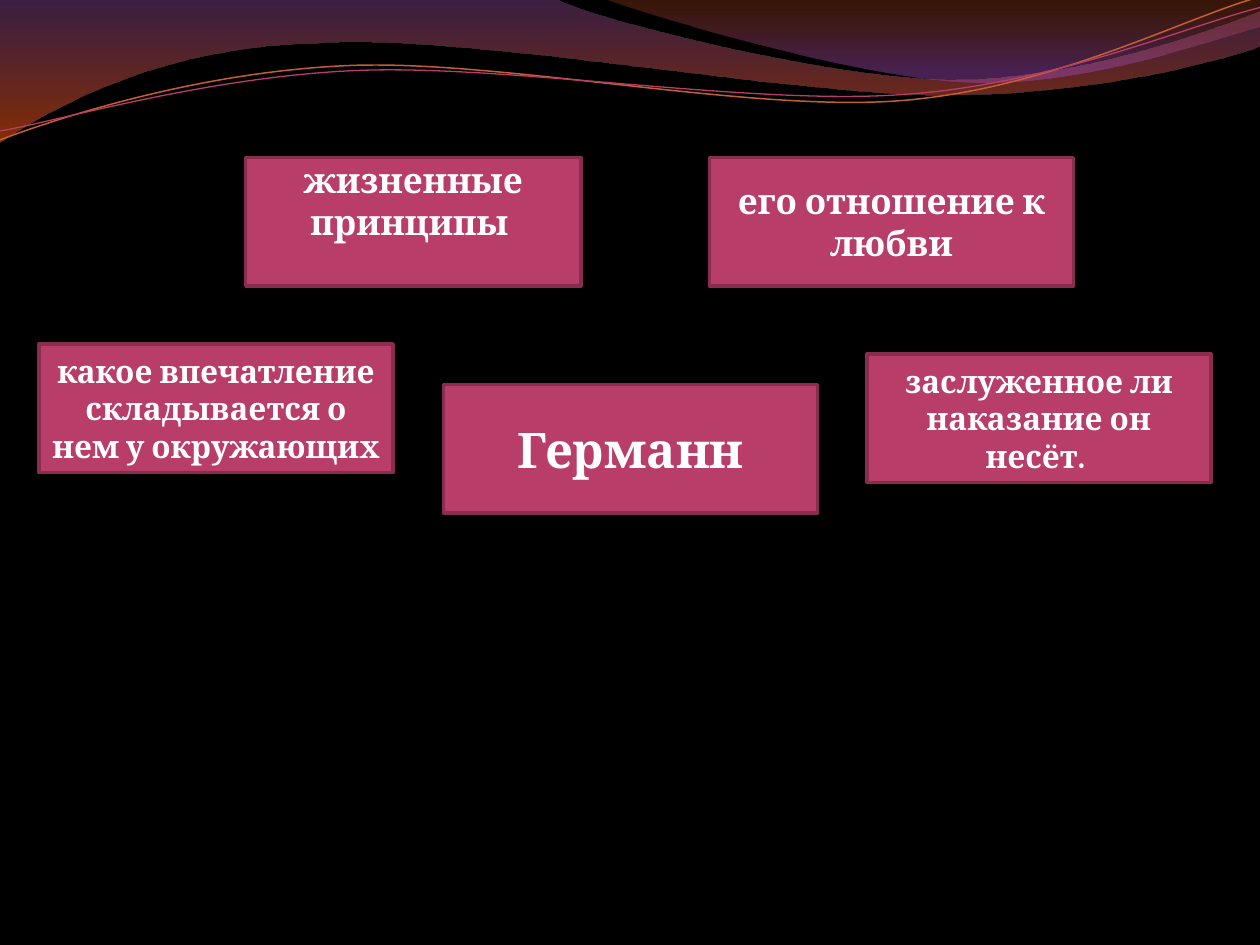
"""Builds a dark slide with a waved header and five topic boxes about Hermann."""
from math import cos, radians, sin

from lxml.etree import SubElement
from pptx import Presentation
from pptx.dml.color import RGBColor
from pptx.enum.shapes import MSO_SHAPE
from pptx.enum.text import MSO_ANCHOR, PP_ALIGN
from pptx.oxml.ns import qn
from pptx.util import Inches, Pt

WIDTH, HEIGHT = 10, 7.5
FONT, BLACK, WHITE, PINK, WINE = "Cambria", "000000", "FFFFFF", "B83D68", "882D4D"
BOX_HEIGHT = 1.02
TILT = 2.7

BANDS = [
    ([(0, 0), (4.4, -0.01), (4.76, 0.17, 6.64, 0.63, 7.58, 0.63),
      (8.53, 0.63, 9.58, 0.26, 10, 0.09), (10.01, 0.36),
      (9.83, 0.44, 8.7, 0.76, 7.46, 0.75), (6.22, 0.75, 3.82, 0.28, 2.57, 0.34),
      (1.29, 0.36, 0.46, 0.83, -0.01, 1.13)],
     [(0, "834591", 45), (1, "F35307", 55)]),
    ([(4.79, -0.01), (5.09, 0.11, 6.82, 0.62, 7.69, 0.65),
      (8.56, 0.69, 9.61, 0.32, 10, 0.21), (10, 0)],
     [(0, "B74915", 30), (0.8, "A14BB4", 45)]),
]
WAVES = [
    ([(0, 1.11), (0.48, 0.93, 1.58, 0.57, 2.77, 0.52),
      (3.95, 0.47, 5.93, 0.89, 7.13, 0.8), (8.33, 0.71, 9.38, 0.15, 9.98, -0.02)],
     (4.99, 0.58), "C45F30", 0.85),
    ([(0, 1.04), (0.47, 0.96, 1.64, 0.61, 2.83, 0.56),
      (4.03, 0.51, 5.97, 0.84, 7.17, 0.75), (8.36, 0.67, 9.41, 0.21, 10, 0.06)],
     (5, 0.59), PINK, 0.75),
]
BOXES = [
    ("Германн", 28, 3.52, 3.05, 2.97, MSO_ANCHOR.MIDDLE),
    ("жизненные принципы ", 20, 1.95, 1.25, 2.66, MSO_ANCHOR.TOP),
    ("его отношение к любви", 20, 5.63, 1.25, 2.89, MSO_ANCHOR.MIDDLE),
    ("заслуженное ли наказание он несёт. ", 18, 6.88, 2.81, 2.73, MSO_ANCHOR.MIDDLE),
    ("какое впечатление складывается о нем у окружающих ", 18, 0.31, 2.73, 2.81,
     MSO_ANCHOR.MIDDLE),
]


def rgb(color):
    return RGBColor.from_string(color)


def turn(part, center, angle):
    cx, cy = center
    c, n = cos(radians(angle)), sin(radians(angle))
    turned = []
    for x, y in zip(part[::2], part[1::2]):
        dx, dy = x - cx, y - cy
        turned += [cx + dx * c - dy * n, cy + dx * n + dy * c]
    return turned


def add_outline(s, outline, close):
    points = [(Inches(x), Inches(y)) for part in outline
              for x, y in zip(part[::2], part[1::2])]
    builder = s.shapes.build_freeform(*points[0])
    builder.add_line_segments(points[1:], close=close)
    sp = builder.convert_to_shape()
    sp.shadow.inherit = False
    lines = iter(list(sp._element.iter(qn("a:lnTo"))))
    for part in outline[1:]:
        group = [next(lines) for _ in part[::2]]
        if len(group) == 3:
            curve = SubElement(group[0].getparent(), qn("a:cubicBezTo"))
            group[0].addprevious(curve)
            for line in group:
                curve.append(line[0])
                line.getparent().remove(line)
    return sp


def add_band(s, outline, stops):
    sp = add_outline(s, outline, True)
    sp.line.fill.background()
    sp.fill.gradient()
    sp.fill.gradient_angle = 270
    for stop, (position, color, _) in zip(sp.fill.gradient_stops, stops):
        stop.position = position
        stop.color.rgb = rgb(color)
    colors = sp._element.spPr.find(qn("a:gradFill")).iter(qn("a:srgbClr"))
    for element, (_, _, opacity) in zip(colors, stops):
        SubElement(element, qn("a:alpha"), val=str(opacity * 1000))


def add_wave(s, outline, center, color, weight):
    sp = add_outline(s, [turn(part, center, TILT) for part in outline], False)
    sp.rotation = -TILT
    sp.fill.background()
    sp.line.color.rgb = rgb(color)
    sp.line.width = Pt(weight)


def add_box(s, text, size, left, top, width, anchor):
    sp = s.shapes.add_shape(MSO_SHAPE.RECTANGLE, Inches(left), Inches(top),
                            Inches(width), Inches(BOX_HEIGHT))
    sp.shadow.inherit = False
    sp.fill.solid()
    sp.fill.fore_color.rgb = rgb(PINK)
    sp.line.color.rgb = rgb(WINE)
    sp.line.width = Pt(2)
    tf = sp.text_frame
    tf.word_wrap = True
    tf.vertical_anchor = anchor
    if anchor == MSO_ANCHOR.TOP:
        tf.margin_top = Inches(0.01)
    p = tf.paragraphs[0]
    p.text = text
    p.alignment = PP_ALIGN.CENTER
    p.font.name, p.font.size, p.font.bold = FONT, Pt(size), True
    p.font.color.rgb = rgb(WHITE)


def main():
    prs = Presentation()
    prs.slide_width, prs.slide_height = Inches(WIDTH), Inches(HEIGHT)
    s = prs.slides.add_slide(prs.slide_layouts[6])
    s.background.fill.solid()
    s.background.fill.fore_color.rgb = rgb(BLACK)
    for add, items in ((add_band, BANDS), (add_wave, WAVES), (add_box, BOXES)):
        for item in items:
            add(s, *item)
    prs.save("out.pptx")


if __name__ == "__main__":
    main()
